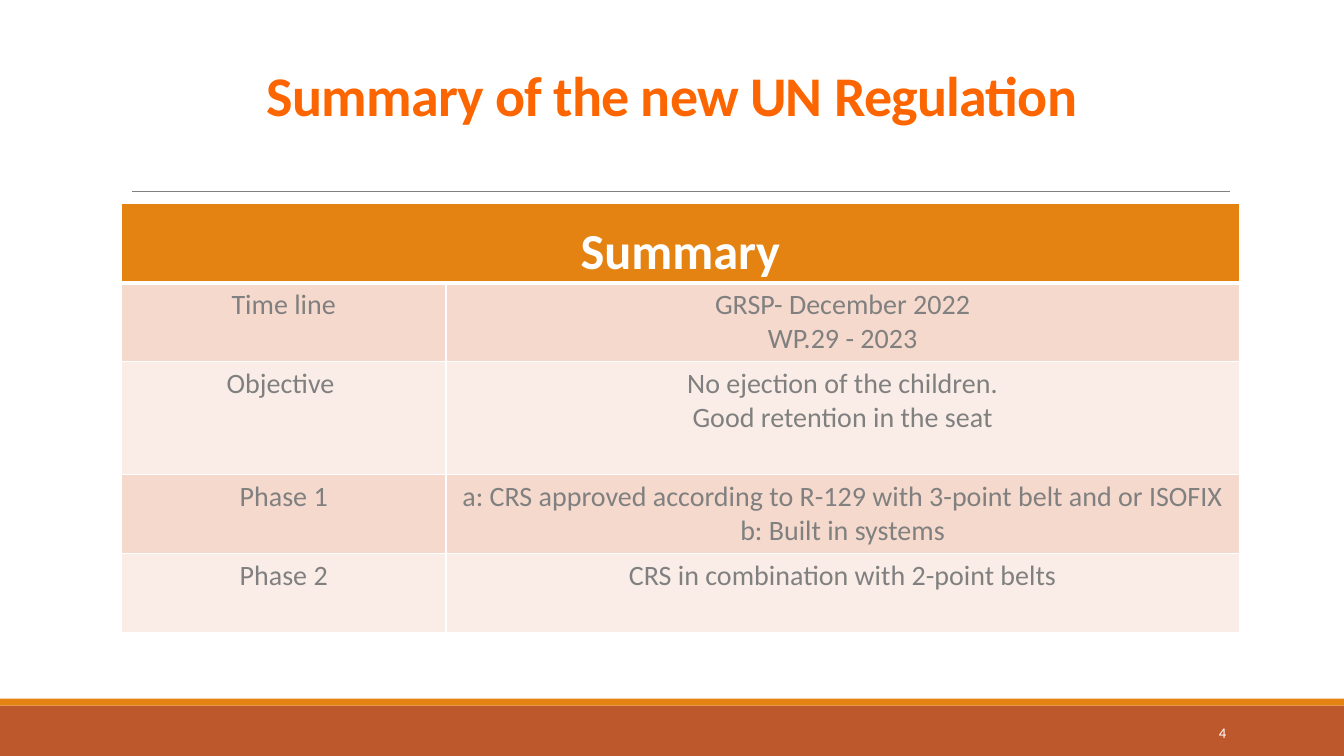
from lxml import etree
from pptx import Presentation
from pptx import util as u
from pptx.dml.color import RGBColor
from pptx.enum import shapes, text
from pptx.oxml.ns import qn

Pt = u.Pt

TITLE = "Summary of the new UN Regulation"
PAGE = "4"
HEADING = "Summary"
ROWS = [
    ("Time line", "GRSP- December 2022\nWP.29 - 2023"),
    ("Objective ", "No ejection of the children.\nGood retention in the seat"),
    ("Phase 1", "a: CRS approved according to R-129 with 3-point belt and or ISOFIX\n"
                "b: Built in systems"),
    ("Phase 2", "CRS in combination with 2-point belts"),
]
COLUMN_WIDTHS = (231.8, 566.6)
ROW_HEIGHTS = (56.5, 56.5, 80.5, 56.5, 56.5)


class Theme:
    font = "Calibri"
    white, grey = "FFFFFF", "808080"
    title, orange, rust = "FC6500", "E48312", "BD582C"
    bands = ("F5D9CC", "FAEDE7")
    title_size, heading_size, body_size, page_size = 40, 36, 20, 10.5


def style(frame, size, color, align, bold=False):
    for paragraph in frame.paragraphs:
        paragraph.alignment = align
        for run in paragraph.runs:
            run.font.name = Theme.font
            run.font.size = Pt(size)
            run.font.bold = bold
            run.font.color.rgb = RGBColor.from_string(color)


def add_band(slide, top, height, color):
    band = slide.shapes.add_shape(shapes.MSO_SHAPE.RECTANGLE, 0, Pt(top), Pt(960), Pt(height))
    band.shadow.inherit = False
    band.fill.solid()
    band.fill.fore_color.rgb = RGBColor.from_string(color)
    band.line.fill.background()


def add_rule(slide):
    rule = slide.shapes.add_connector(
        shapes.MSO_CONNECTOR.STRAIGHT, Pt(94.3), Pt(136.6), Pt(878.8), Pt(136.6))
    rule.line.color.rgb = RGBColor.from_string(Theme.grey)
    rule.line.width = Pt(0.5)
    etree.SubElement(rule._element.spPr, qn("a:effectLst"))


def add_page(slide):
    page = slide.shapes.add_textbox(Pt(780), Pt(508.6), Pt(103), Pt(28.8))
    page.text_frame.word_wrap = True
    page.text_frame.vertical_anchor = text.MSO_ANCHOR.MIDDLE
    page.text_frame.text = PAGE
    style(page.text_frame, Theme.page_size, Theme.white, text.PP_ALIGN.RIGHT)


def set_title(slide):
    title = slide.shapes.title
    title.left, title.top, title.width, title.height = Pt(120), Pt(31.5), Pt(720), Pt(79)
    frame = title.text_frame
    frame.text = TITLE
    frame.word_wrap = True
    frame.auto_size = text.MSO_AUTO_SIZE.NONE
    frame.vertical_anchor = text.MSO_ANCHOR.MIDDLE
    frame.paragraphs[0].line_spacing = 0.85
    style(frame, Theme.title_size, Theme.title, text.PP_ALIGN.CENTER, True)
    frame.paragraphs[0].runs[0]._r.get_or_add_rPr().set("spc", "-50")


def fill_cell(cell, color):
    cell.fill.solid()
    cell.fill.fore_color.rgb = RGBColor.from_string(color)


def add_borders(cell, top, bottom):
    sides = (("a:lnL", 1), ("a:lnR", 1), ("a:lnT", top), ("a:lnB", bottom))
    for place, (tag, width) in enumerate(sides):
        border = etree.Element(qn(tag), w=str(Pt(width)))
        paint = etree.SubElement(border, qn("a:solidFill"))
        etree.SubElement(paint, qn("a:srgbClr"), val=Theme.white)
        cell._tc.get_or_add_tcPr().insert(place, border)


def add_summary(slide):
    summary = slide.shapes.add_table(
        len(ROW_HEIGHTS), len(COLUMN_WIDTHS), Pt(86.8), Pt(145.5),
        Pt(sum(COLUMN_WIDTHS)), Pt(sum(ROW_HEIGHTS))).table
    for column, width in zip(summary.columns, COLUMN_WIDTHS):
        column.width = Pt(width)
    for row, height in zip(summary.rows, ROW_HEIGHTS):
        row.height = Pt(height)

    heading = summary.cell(0, 0)
    heading.merge(summary.cell(0, 1))
    heading.text_frame.text = HEADING
    heading.vertical_anchor = text.MSO_ANCHOR.BOTTOM
    heading.margin_left = heading.margin_right = heading.margin_top = Pt(0.7)
    heading.margin_bottom = 0
    style(heading.text_frame, Theme.heading_size, Theme.white, text.PP_ALIGN.CENTER, True)
    for cell in summary.rows[0].cells:
        fill_cell(cell, Theme.orange)
        add_borders(cell, 1, 3)

    for index, entries in enumerate(ROWS):
        for cell, entry in zip(summary.rows[index + 1].cells, entries):
            cell.text_frame.text = entry
            style(cell.text_frame, Theme.body_size, Theme.grey, text.PP_ALIGN.CENTER)
            fill_cell(cell, Theme.bands[index % 2])
            add_borders(cell, 3 if index == 0 else 1, 1)


def main():
    deck = Presentation()
    deck.slide_width, deck.slide_height = Pt(960), Pt(540)
    slide = deck.slides.add_slide(deck.slide_layouts[5])
    add_band(slide, 504, 36, Theme.rust)
    add_band(slide, 499, 5, Theme.orange)
    add_rule(slide)
    add_page(slide)
    set_title(slide)
    add_summary(slide)
    deck.save("out.pptx")


if __name__ == "__main__":
    main()
